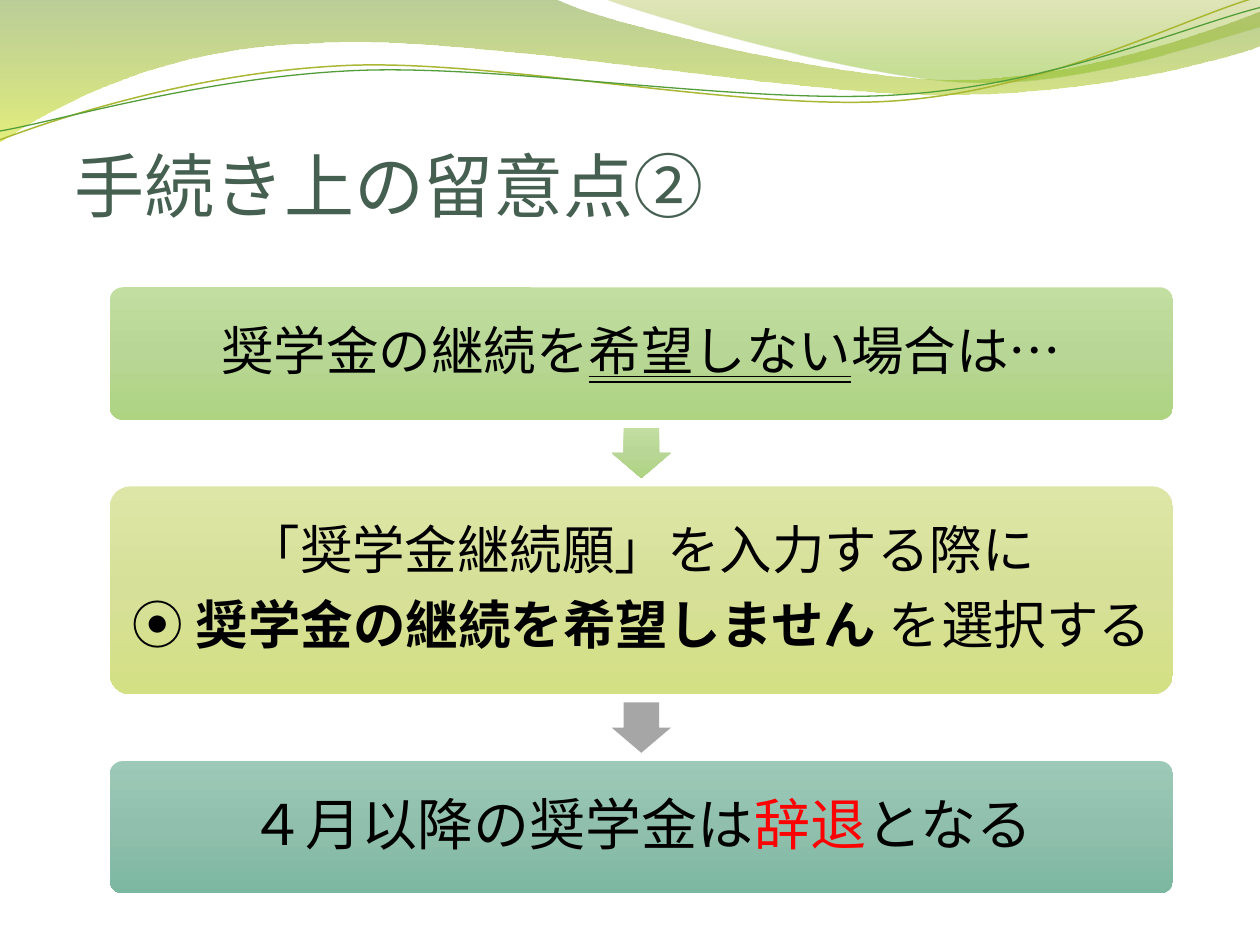
"""Build a slide on declining a scholarship: a wave header, a title and three steps."""
from dataclasses import dataclass, field
from typing import Any

from lxml import etree
from pptx import Presentation
from pptx.dml.color import RGBColor
from pptx.enum.shapes import MSO_SHAPE
from pptx.enum.text import MSO_ANCHOR, MSO_AUTO_SIZE, MSO_UNDERLINE, PP_ALIGN
from pptx.oxml.ns import qn
from pptx.util import Inches, Pt

ROUNDED, DOWN_ARROW = MSO_SHAPE.ROUNDED_RECTANGLE, MSO_SHAPE.DOWN_ARROW
LEFT, CENTER = PP_ALIGN.LEFT, PP_ALIGN.CENTER
MIDDLE, BOTTOM = MSO_ANCHOR.MIDDLE, MSO_ANCHOR.BOTTOM
DOUBLE = MSO_UNDERLINE.DOUBLE_LINE
NO_FIT = MSO_AUTO_SIZE.NONE

BLACK = RGBColor(0x00, 0x00, 0x00)
RED = RGBColor(0xFF, 0x00, 0x00)
TITLE_GREEN = RGBColor(0x45, 0x5F, 0x51)
GRAY = RGBColor(0xA6, 0xA6, 0xA6)
OLIVE = RGBColor(0xA9, 0xB7, 0x33)
LEAF = RGBColor(0x54, 0x9E, 0x39)
MOSS = RGBColor(0x69, 0x92, 0x1C)
LEMON = RGBColor(0xCC, 0xE1, 0x0F)
KHAKI = RGBColor(0x9B, 0xAA, 0x1A)
GRASS = RGBColor(0x81, 0xBA, 0x16)
GREENS = (RGBColor(0xC2, 0xDF, 0xA1), RGBColor(0xB8, 0xD6, 0x95), RGBColor(0xAE, 0xD4, 0x81))
LIMES = (RGBColor(0xDD, 0xE6, 0xA6), RGBColor(0xD7, 0xE0, 0x98), RGBColor(0xD4, 0xE0, 0x84))
TEALS = (RGBColor(0x9D, 0xCA, 0xB8), RGBColor(0x90, 0xC0, 0xAD), RGBColor(0x7C, 0xB7, 0xA1))

FONT = "Noto Sans CJK JP"
SLIDE_W, SLIDE_H = 10, 7.5
STEP_LEFT, STEP_TOP, STEP_W, STEP_GAP = 0.87, 2.28, 8.44, 0.53
ARROW_W, ARROW_H = 0.47, 0.4

Point = tuple[float, float]


@dataclass
class Stop:
    position: int
    color: RGBColor
    opacity: int = 100


@dataclass
class Run:
    text: str
    style: dict[str, Any] = field(default_factory=dict)
    color: RGBColor = BLACK


@dataclass
class Step:
    height: float
    colors: tuple[RGBColor, ...]
    size: int
    lines: list[list[Run]]
    arrow: tuple[RGBColor, ...] = ()


@dataclass
class Wave:
    start: Point
    segments: list[tuple[Point, ...]]
    stops: tuple[Stop, ...] = ()
    line: RGBColor | None = None
    weight: float = 0


WAVES = [
    Wave((0, 0), [((4.4, -0.01),),
                  ((4.75, 0.17), (6.63, 0.63), (7.58, 0.63)),
                  ((8.53, 0.63), (9.58, 0.26), (10, 0.09)),
                  ((10.01, 0.36),),
                  ((9.83, 0.44), (8.69, 0.76), (7.46, 0.75)),
                  ((6.22, 0.75), (3.81, 0.28), (2.57, 0.34)),
                  ((1.29, 0.36), (0.46, 0.83), (-0.01, 1.13))],
         (Stop(0, MOSS, 45), Stop(100, LEMON, 55))),
    Wave((4.79, -0.01), [((5.09, 0.11), (6.82, 0.62), (7.68, 0.65)),
                         ((8.55, 0.69), (9.61, 0.32), (10, 0.21)),
                         ((10, 0),)],
         (Stop(0, KHAKI, 30), Stop(80, GRASS, 45))),
    Wave((0, 1.11), [((0.48, 0.93), (1.57, 0.57), (2.76, 0.52)),
                     ((3.95, 0.47), (5.92, 0.89), (7.12, 0.8)),
                     ((8.33, 0.71), (9.38, 0.15), (9.97, -0.02))], line=OLIVE, weight=0.85),
    Wave((0, 1.04), [((0.47, 0.96), (1.63, 0.61), (2.83, 0.56)),
                     ((4.02, 0.51), (5.97, 0.84), (7.17, 0.75)),
                     ((8.36, 0.67), (9.41, 0.21), (10, 0.06))], line=LEAF, weight=0.75),
]

STEPS = [
    Step(1.05, GREENS, 30, [[Run("奨学金の継続を"), Run("希望しない", {"underline": DOUBLE}),
                             Run("場合は…")]], GREENS),
    Step(1.65, LIMES, 30, [[Run("「奨学金継続願」を入力する際に")],
                           [Run("⦿ "), Run("奨学金の継続を希望しません ", {"bold": True}),
                            Run("を選択する")]], (GRAY,)),
    Step(1.05, TEALS, 32, [[Run("４月以降の奨学金は"), Run("辞退", color=RED), Run("となる")]]),
]


def even_stops(colors: tuple[RGBColor, ...]) -> tuple[Stop, ...]:
    """Spread colours evenly from 0 to 100 percent."""
    return tuple(Stop(100 * i // max(len(colors) - 1, 1), c) for i, c in enumerate(colors))


def paint(shape, stops: tuple[Stop, ...]) -> None:
    """Fill a shape with one colour or a downward gradient."""
    if len(stops) == 1:
        shape.fill.solid()
        shape.fill.fore_color.rgb = stops[0].color
        return
    shape.fill.gradient()
    shape.fill.gradient_angle = 270
    stop_list = shape._element.spPr.find(qn("a:gradFill")).find(qn("a:gsLst"))
    for default in list(stop_list):
        stop_list.remove(default)
    for stop in stops:
        entry = etree.SubElement(stop_list, qn("a:gs"), pos=str(stop.position * 1000))
        color = etree.SubElement(entry, qn("a:srgbClr"), val=str(stop.color))
        if stop.opacity < 100:
            etree.SubElement(color, qn("a:alpha"), val=str(stop.opacity * 1000))


def bend(shape, segments: list[tuple[Point, ...]]) -> None:
    """Merge each three straight segments of a curve into one cubic curve."""
    sides = iter(list(shape._element.iter(qn("a:lnTo"))))
    for segment in segments:
        first, *others = [next(sides) for _ in segment]
        if others:
            first.tag = qn("a:cubicBezTo")
            for side in others:
                first.append(side[0])
                side.getparent().remove(side)


def draw_wave(slide, wave: Wave) -> None:
    """Draw one header wave, filled or as a line."""
    points = [(Inches(x), Inches(y)) for segment in wave.segments for x, y in segment]
    builder = slide.shapes.build_freeform(*map(Inches, wave.start), scale=1.0)
    builder.add_line_segments(points, close=bool(wave.stops))
    shape = builder.convert_to_shape()
    bend(shape, wave.segments)
    shape.shadow.inherit = False
    if wave.stops:
        paint(shape, wave.stops)
        shape.line.fill.background()
    else:
        shape.fill.background()
        shape.line.color.rgb = wave.line
        shape.line.width = Pt(wave.weight)


def write_line(paragraph, runs: list[Run], size: int) -> None:
    """Write formatted runs into a paragraph."""
    for run in runs:
        part = paragraph.add_run()
        part.text = run.text
        for name, value in {"size": Pt(size), "name": FONT, **run.style}.items():
            setattr(part.font, name, value)
        part.font.color.rgb = run.color
        etree.SubElement(part._r.get_or_add_rPr(), qn("a:ea"), typeface=FONT)


def format_frame(frame, anchor, margins: tuple[float, ...]) -> None:
    """Set anchor, wrapping and left, top, right and bottom margins."""
    sides = ("margin_left", "margin_top", "margin_right", "margin_bottom")
    values = {"word_wrap": True, "auto_size": NO_FIT, "vertical_anchor": anchor,
              **dict(zip(sides, map(Inches, margins)))}
    for name, value in values.items():
        setattr(frame, name, value)


def add_block(slide, kind, left: float, top: float, width: float, height: float,
              colors: tuple[RGBColor, ...], adjustments: tuple[float, ...]):
    """Add a borderless preset shape."""
    shape = slide.shapes.add_shape(kind, *map(Inches, (left, top, width, height)))
    shape.shadow.inherit = False
    shape.line.fill.background()
    for i, value in enumerate(adjustments):
        shape.adjustments[i] = value
    paint(shape, even_stops(colors))
    return shape


def draw_step(slide, step: Step, top: float) -> None:
    """Draw a step and the arrow below it."""
    box = add_block(slide, ROUNDED, STEP_LEFT, top, STEP_W, step.height, step.colors, (0.1,))
    frame = box.text_frame
    format_frame(frame, MIDDLE, (0.1, 0.12, 0.1, 0.12))
    for i, runs in enumerate(step.lines):
        paragraph = frame.add_paragraph() if i else frame.paragraphs[0]
        paragraph.alignment, paragraph.line_spacing = CENTER, 0.9
        after = etree.SubElement(paragraph._p.get_or_add_pPr(), qn("a:spcAft"))
        etree.SubElement(after, qn("a:spcPct"), val="35000")
        write_line(paragraph, runs, step.size)
    if step.arrow:
        add_block(slide, DOWN_ARROW, STEP_LEFT + (STEP_W - ARROW_W) / 2,
                  top + step.height + (STEP_GAP - ARROW_H) / 2,
                  ARROW_W, ARROW_H, step.arrow, (0.6, 0.5))


def main() -> None:
    """Build and save the slide."""
    deck = Presentation()
    deck.slide_width, deck.slide_height = Inches(SLIDE_W), Inches(SLIDE_H)
    slide = deck.slides.add_slide(deck.slide_layouts[5])
    for wave in WAVES:
        draw_wave(slide, wave)
    title = slide.shapes.title
    for name, value in {"left": 0.59, "top": 0.54, "width": 9, "height": 1.25}.items():
        setattr(title, name, Inches(value))
    format_frame(title.text_frame, BOTTOM, (0, 0.05, 0, 0))
    heading = title.text_frame.paragraphs[0]
    heading.alignment, heading.line_spacing = LEFT, 0.8
    write_line(heading, [Run("手続き上の留意点②", color=TITLE_GREEN)], 40)
    top = STEP_TOP
    for step in STEPS:
        draw_step(slide, step, top)
        top += step.height + STEP_GAP
    deck.save("out.pptx")


if __name__ == "__main__":
    main()
